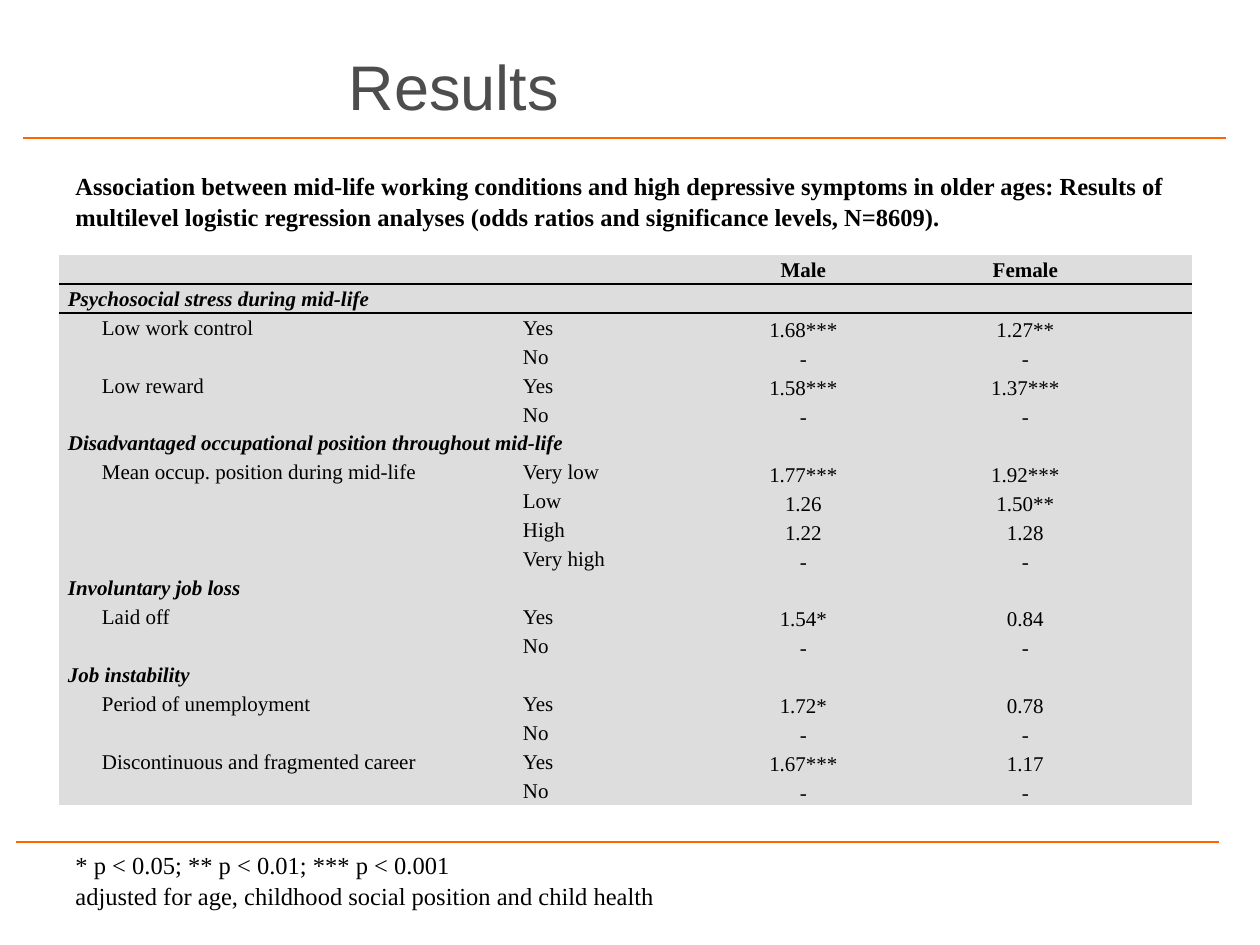
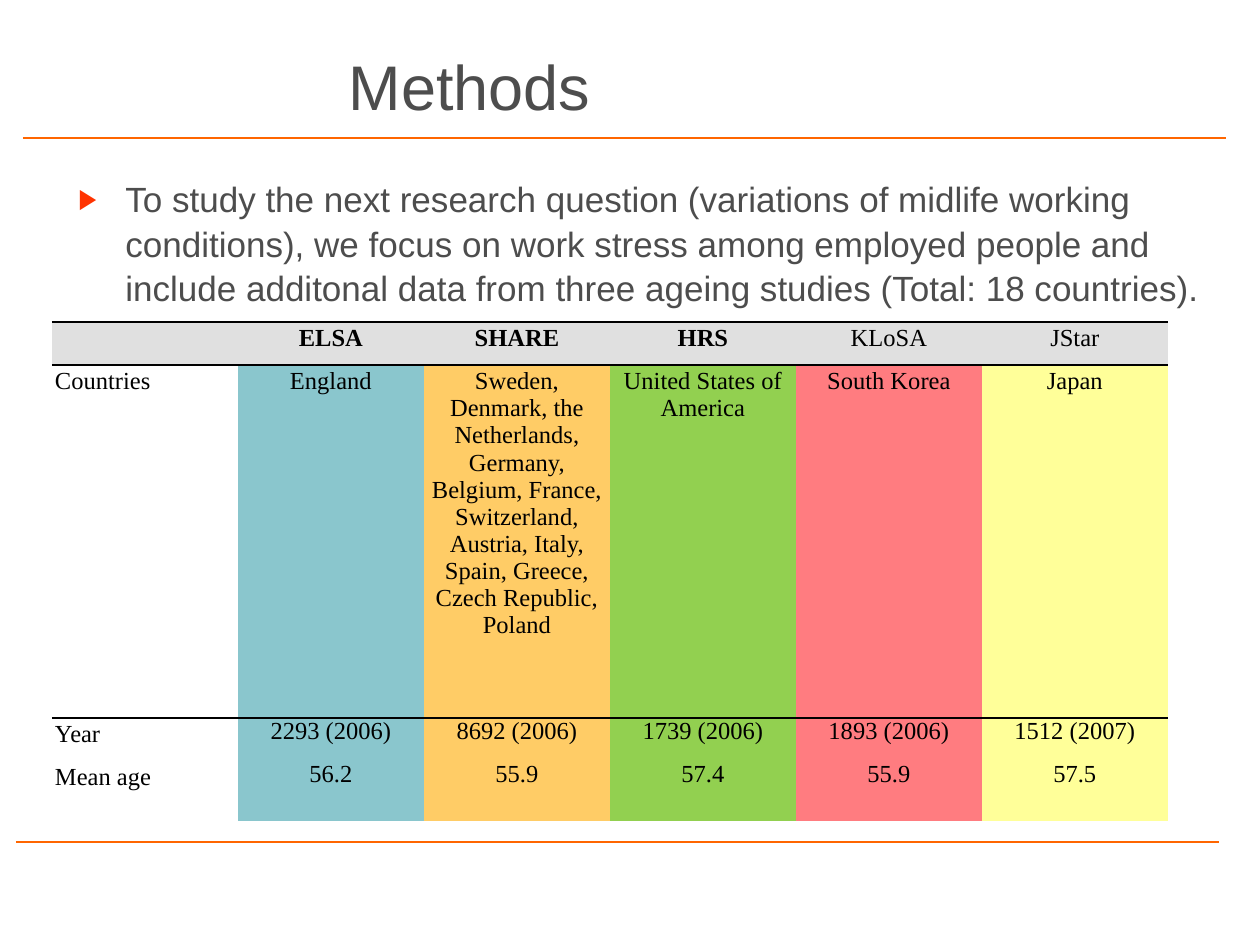
"""Build two study slides: the regression results and the ageing studies used."""
from lxml.etree import SubElement
from pptx import Presentation
from pptx.dml.color import RGBColor
from pptx.enum.shapes import MSO_CONNECTOR
from pptx.enum.text import MSO_ANCHOR, MSO_AUTO_SIZE, PP_ALIGN
from pptx.oxml import parse_xml
from pptx.oxml.ns import nsdecls, qn
from pptx.util import Pt

PX = 914400 / 126
SANS, SERIF = "Arial", "Times New Roman"
LEAD = 1.06
PLAIN = "{2D5ABB26-0587-4C30-8999-92F81FD0307C}"
HUES = {
    "rule": "FF6600", "title": "4D4D4D", "ink": "000000", "mark": "FF3300",
    "grid": "DDDDDD", "head": "E0E0E0", "ELSA": "8AC6CD", "SHARE": "FFCC66",
    "HRS": "92D050", "KLoSA": "FF7C80", "JStar": "FFFF99",
}


def style(para, face, size, hue="ink", bold=False, italic=False):
    font = para.font
    font.name, font.size = face, Pt(size)
    font.bold, font.italic = bold, italic
    font.color.rgb = RGBColor.from_string(HUES[hue])


def fill(cell, text, size, hue, pad, edges="", mid=False, bold=False, italic=False):
    cell.margin_left = cell.margin_right = round(pad[0] * PX)
    cell.margin_top = cell.margin_bottom = round(pad[1] * PX)
    para = cell.text_frame.paragraphs[0]
    if text:
        para.text = text
        para.alignment = PP_ALIGN.CENTER if mid else PP_ALIGN.LEFT
        style(para, SERIF, size, "ink", bold, italic)
    else:
        SubElement(para._p, qn("a:endParaRPr"), sz=str(size * 100))
    if hue:
        cell.fill.solid()
        cell.fill.fore_color.rgb = RGBColor.from_string(HUES[hue])
    else:
        cell.fill.background()
    for spot, edge in enumerate(edges):
        cell._tc.get_or_add_tcPr().insert(spot, parse_xml(
            f'<a:ln{edge} {nsdecls("a")} w="12700"><a:solidFill>'
            f'<a:srgbClr val="{HUES["ink"]}"/></a:solidFill></a:ln{edge}>'))


deck = Presentation()
deck.slide_width, deck.slide_height = round(1260 * PX), round(945 * PX)

pages, grids = [], []
for name, left, top, cols, rows in [
    ("Results", 59, 255, [34, 421, 234] + [111] * 4, [29] * 19),
    ("Methods", 52, 322, [186] * 6, [43, 353, 43, 60]),
]:
    page = deck.slides.add_slide(deck.slide_layouts[5])
    pages.append(page)
    for x, y in [(23, 138), (16, 842)]:
        rule = page.shapes.add_connector(
            MSO_CONNECTOR.STRAIGHT, *(round(n * PX) for n in (x, y, x + 1203, y)))
        rule.line.color.rgb = RGBColor.from_string(HUES["rule"])
        rule.line.width = Pt(1.5)
        SubElement(rule._element.spPr, qn("a:effectLst"))

    title = page.shapes.title
    title.left, title.top, title.width, title.height = (
        round(n * PX) for n in (336, 41, 888, 88))
    frame = title.text_frame
    frame.text = name
    frame.auto_size = MSO_AUTO_SIZE.NONE
    frame.vertical_anchor = MSO_ANCHOR.BOTTOM
    para = frame.paragraphs[0]
    para.alignment = PP_ALIGN.LEFT
    style(para, SANS, 36, "title")

    grid = page.shapes.add_table(
        len(rows), len(cols),
        *(round(n * PX) for n in (left, top, sum(cols), sum(rows)))).table
    grid.first_row = grid.horz_banding = False
    grid._tbl.tblPr.find(qn("a:tableStyleId")).text = PLAIN
    for col, wide in zip(grid.columns, cols):
        col.width = round(wide * PX)
    for row, high in zip(grid.rows, rows):
        row.height = round(high * PX)
    grids.append(grid)

odds = [
    ("", "", "", "Male", "Female"),
    ("Psychosocial stress during mid-life", "", "", "", ""),
    ("", "Low work control", "Yes", "1.68***", "1.27**"),
    ("", "", "No", "-", "-"),
    ("", "Low reward", "Yes", "1.58***", "1.37***"),
    ("", "", "No", "-", "-"),
    ("Disadvantaged occupational position throughout mid-life", "", "", "", ""),
    ("", "Mean occup. position during mid-life", "Very low", "1.77***", "1.92***"),
    ("", "", "Low", "1.26", "1.50**"),
    ("", "", "High", "1.22", "1.28"),
    ("", "", "Very high", "-", "-"),
    ("Involuntary job loss", "", "", "", ""),
    ("", "Laid off", "Yes", "1.54*", "0.84"),
    ("", "", "No", "-", "-"),
    ("Job instability", "", "", "", ""),
    ("", "Period of unemployment", "Yes", "1.72*", "0.78"),
    ("", "", "No", "-", "-"),
    ("", "Discontinuous and fragmented career", "Yes", "1.67***", "1.17"),
    ("", "", "No", "-", "-"),
]
for r, (group, label, level, male, female) in enumerate(odds):
    for c, text in enumerate((group, label, level, male, "", female, "")):
        cell = grids[0].cell(r, c)
        fill(cell, text, 12, "grid", (9, 0), {0: "B", 1: "T"}.get(r, ""),
             c > 2, r == 0 or c == 0, c == 0)
        cell.text_frame.paragraphs[0].line_spacing = 1.15
        if r and c > 2:
            cell.vertical_anchor = MSO_ANCHOR.BOTTOM
    if group:
        grids[0].cell(r, 0).merge(grids[0].cell(r, 2))

studies = [
    ("", "Countries", "Year", "Mean age"),
    ("ELSA", "England", "2293 (2006)", "56.2"),
    ("SHARE", "Sweden, Denmark, the Netherlands, Germany, Belgium, France, "
     "Switzerland, Austria, Italy, Spain, Greece, Czech Republic, Poland",
     "8692 (2006)", "55.9"),
    ("HRS", "United States of America", "1739 (2006)", "57.4"),
    ("KLoSA", "South Korea", "1893 (2006)", "55.9"),
    ("JStar", "Japan", "1512 (2007)", "57.5"),
]
for c, study in enumerate(studies):
    for r, text in enumerate(study):
        pad = 0 if c and r > 1 else 3
        fill(grids[1].cell(r, c), text, 14, study[0] if r else "head", (pad, pad),
             {0: "TB", 1: "T"}.get(r, ""), c > 0, r == 0 and c < 4)

for page, box, lines, face, size, hue, bold in [
    (pages[0], (63, 842, 1125, 72),
     ["* p < 0.05; ** p < 0.01; *** p < 0.001",
      "adjusted for age, childhood social position and child health"],
     SERIF, 14, "ink", False),
    (pages[0], (63, 163, 1135, 72),
     ["Association between mid-life working conditions and high depressive symptoms "
      "in older ages: Results of multilevel logistic regression analyses (odds ratios "
      "and significance levels, N=8609)."],
     SERIF, 14, "ink", True),
    (pages[1], (66, 169, 1153, 145),
     ["To study the next research question (variations of midlife working conditions), "
      "we focus on work stress among employed people and include additonal data from "
      "three ageing studies (Total: 18 countries)."],
     SANS, 20, "title", False),
]:
    frame = page.shapes.add_textbox(*(round(n * PX) for n in box)).text_frame
    frame.word_wrap = True
    frame.text = "\n".join(lines)
    for para in frame.paragraphs:
        if face == SANS:
            props = para._p.get_or_add_pPr()
            dent = round(47 * PX)
            props.set("marL", str(dent))
            props.set("indent", str(-dent))
            tint = SubElement(props, qn("a:buClr"))
            SubElement(tint, qn("a:srgbClr"), val=HUES["mark"])
            SubElement(props, qn("a:buSzPct"), val="80000")
            SubElement(props, qn("a:buFont"), typeface=SANS)
            SubElement(props, qn("a:buChar"), char="▶")
        para.line_spacing = LEAD
        style(para, face, size, hue, bold)

deck.save("out.pptx")
